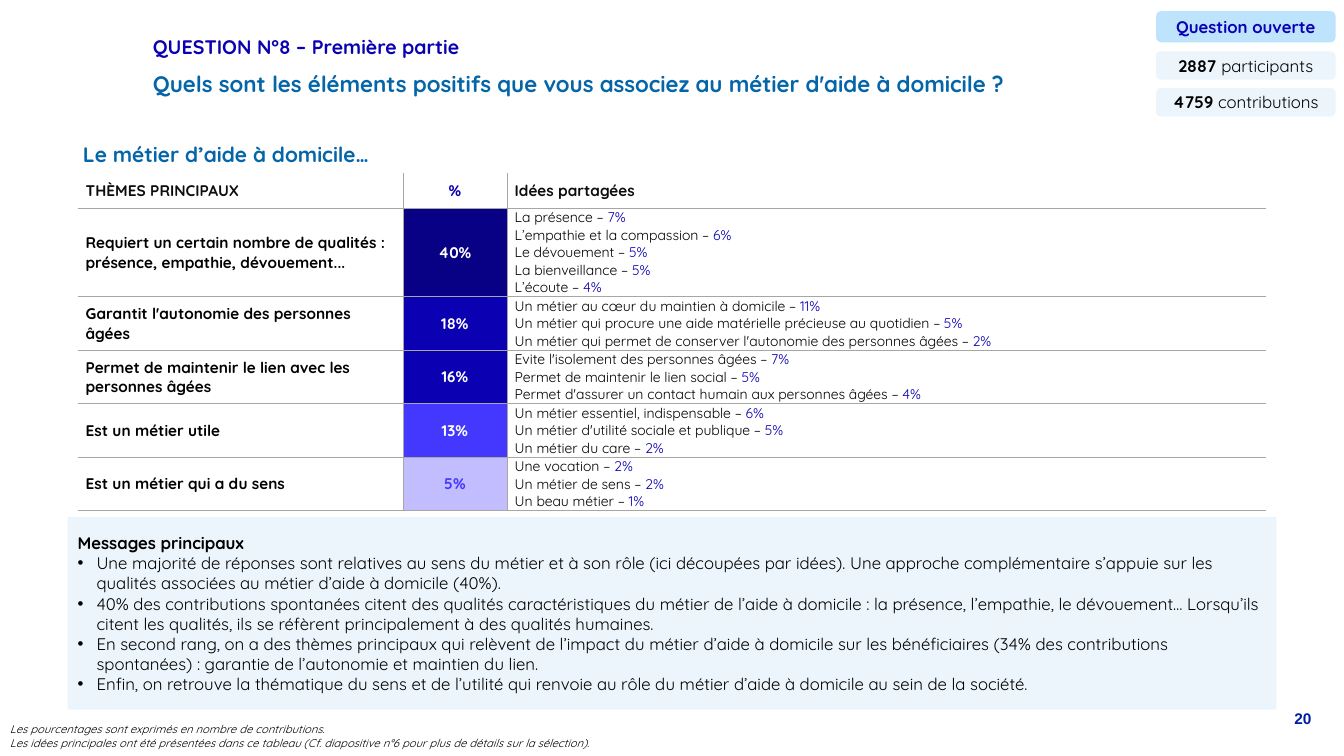
from lxml import etree
from pptx import Presentation
from pptx.dml.color import RGBColor
from pptx.enum import shapes, text
from pptx.oxml import ns
from pptx.util import Pt

NAVY = RGBColor(0x08, 0x00, 0x85)
DEEP = RGBColor(0x0B, 0x00, 0xB2)
VIVID = RGBColor(0x44, 0x38, 0xFF)
LILAC = RGBColor(0xC1, 0xBD, 0xFF)
BLUE = RGBColor(0x04, 0x65, 0xA9)
PAGE = RGBColor(0x01, 0x1C, 0xA3)
SKY = RGBColor(0xBD, 0xE3, 0xFD)
PALE = RGBColor(0xEC, 0xF5, 0xFB)
BLACK = RGBColor(0, 0, 0)
SOFT = RGBColor(0x0D, 0x0D, 0x0D)
WHITE = RGBColor(0xFF, 0xFF, 0xFF)
GREY = "A5A6A5"
LEFT, MID, RIGHT, FULL = (text.PP_ALIGN.LEFT, text.PP_ALIGN.CENTER,
                          text.PP_ALIGN.RIGHT, text.PP_ALIGN.JUSTIFY)


def write(frame, lines, size, ink=BLACK, bold=True, italic=False, align=LEFT,
          font="Quicksand", lead=None, mark=False):
    frame.word_wrap = True
    for i, line in enumerate(lines):
        para = frame.paragraphs[0] if i == 0 else frame.add_paragraph()
        para.alignment = align
        if lead:
            para.line_spacing = lead
        if mark and i > 0:
            props = para._p.get_or_add_pPr()
            props.set("marL", str(Pt(13.5)))
            props.set("indent", str(-Pt(13.5)))
            etree.SubElement(props, ns.qn("a:buFont"), typeface="Arial")
            etree.SubElement(props, ns.qn("a:buChar"), char="•")
        for words, tint, thick in [(line, ink, bold)] if isinstance(line, str) else line:
            run = para.add_run()
            run.text = words
            run.font.name = font
            run.font.size = Pt(size)
            run.font.bold = thick
            run.font.italic = italic
            run.font.color.rgb = tint


def block(kind, left, top, width, height, fill):
    shape = slide.shapes.add_shape(kind, Pt(left), Pt(top), Pt(width), Pt(height))
    shape.shadow.inherit = False
    shape.fill.solid()
    shape.fill.fore_color.rgb = fill
    shape.line.fill.background()
    shape.text_frame.vertical_anchor = text.MSO_ANCHOR.MIDDLE
    return shape.text_frame


deck = Presentation()
deck.slide_width, deck.slide_height = Pt(960), Pt(540)
slide = deck.slides.add_slide(deck.slide_layouts[6])

labels = [
    (102.2, 33.1, 675.4, 55.4, text.MSO_ANCHOR.MIDDLE,
     ["Quels sont les éléments positifs que vous associez au métier d'aide à domicile ?"],
     dict(size=16, ink=BLUE, lead=0.9)),
    (102.2, 24.5, 828, 19.4, text.MSO_ANCHOR.MIDDLE,
     ["QUESTION N°8 – Première partie"], dict(size=14, ink=DEEP, lead=0.9)),
    (52.2, 102.2, 246.6, 20.2, text.MSO_ANCHOR.TOP,
     ["Le métier d’aide à domicile…"], dict(size=15, ink=BLUE, lead=0.7)),
    (0, 512.6, 530.6, 26.6, text.MSO_ANCHOR.TOP,
     ["Les pourcentages sont exprimés en nombre de contributions.",
      "Les idées principales ont été présentées dans ce tableau "
      "(Cf. diapositive n°6 pour plus de détails sur la sélection)."],
     dict(size=8, bold=False, italic=True, align=FULL)),
    (802.1, 502.6, 141.8, 37.4, text.MSO_ANCHOR.TOP,
     ["20"], dict(size=11, ink=PAGE, align=RIGHT, font="Arial")),
]
for left, top, width, height, anchor, lines, look in labels:
    box = slide.shapes.add_textbox(Pt(left), Pt(top), Pt(width), Pt(height))
    box.text_frame.vertical_anchor = anchor
    write(box.text_frame, lines, **look)

themes = [
    ("Requiert un certain nombre de qualités : présence, empathie, dévouement...",
     "40%", NAVY, WHITE,
     [("La présence", 7), ("L’empathie et la compassion", 6), ("Le dévouement", 5),
      ("La bienveillance", 5), ("L’écoute", 4)]),
    ("Garantit l'autonomie des personnes âgées", "18%", DEEP, WHITE,
     [("Un métier au cœur du maintien à domicile", 11),
      ("Un métier qui procure une aide matérielle précieuse au quotidien", 5),
      ("Un métier qui permet de conserver l'autonomie des personnes âgées", 2)]),
    ("Permet de maintenir le lien avec les personnes âgées", "16%", DEEP, WHITE,
     [("Evite l'isolement des personnes âgées", 7),
      ("Permet de maintenir le lien social", 5),
      ("Permet d'assurer un contact humain aux personnes âgées", 4)]),
    ("Est un métier utile", "13%", VIVID, WHITE,
     [("Un métier essentiel, indispensable", 6),
      ("Un métier d'utilité sociale et publique", 5), ("Un métier du care", 2)]),
    ("Est un métier qui a du sens", "5%", LILAC, VIVID,
     [("Une vocation", 2), ("Un métier de sens", 2), ("Un beau métier", 1)]),
]
tall = [25.2] + [12.5 * len(theme[4]) + 0.72 for theme in themes]
grid = slide.shapes.add_table(6, 3, Pt(55.6), Pt(123.3), Pt(848.7), Pt(sum(tall))).table
grid.first_row = grid.horz_banding = False
for col, width in zip(grid.columns, (232.2, 74.3, 542.2)):
    col.width = Pt(width)
for row, height in zip(grid.rows, tall):
    row.height = Pt(height)

for c, (head, ink, align) in enumerate([("THÈMES PRINCIPAUX", SOFT, LEFT),
                                        ("%", DEEP, MID), ("Idées partagées", SOFT, LEFT)]):
    write(grid.cell(0, c).text_frame, [head], 11, ink, align=align)
for r, (theme, share, fill, ink, ideas) in enumerate(themes, 1):
    write(grid.cell(r, 0).text_frame, [theme], 11)
    write(grid.cell(r, 1).text_frame, [share], 11, ink, align=MID)
    write(grid.cell(r, 2).text_frame,
          [[(f"{idea} – ", BLACK, False), (f"{part}%", DEEP, False)] for idea, part in ideas], 10)

for r in range(6):
    for c in range(3):
        cell = grid.cell(r, c)
        cell.vertical_anchor = text.MSO_ANCHOR.MIDDLE
        cell.margin_left = cell.margin_right = Pt(5.6)
        cell.margin_top, cell.margin_bottom = Pt(0.6), 0
        props = cell._tc.get_or_add_tcPr()
        for side, shown in (("L", c > 0), ("R", c < 2), ("T", r > 0), ("B", True)):
            edge = etree.SubElement(props, ns.qn("a:ln" + side), w=str(Pt(0.25)))
            if shown:
                paint = etree.SubElement(edge, ns.qn("a:solidFill"))
                etree.SubElement(paint, ns.qn("a:srgbClr"), val=GREY)
            else:
                etree.SubElement(edge, ns.qn("a:noFill"))
        if r > 0 and c == 1:
            cell.fill.solid()
            cell.fill.fore_color.rgb = themes[r - 1][2]
        else:
            cell.fill.background()

notes = [
    "Une majorité de réponses sont relatives au sens du métier et à son rôle (ici découpées par "
    "idées). Une approche complémentaire s’appuie sur les qualités associées au métier d’aide à "
    "domicile (40%).",
    "40% des contributions spontanées citent des qualités caractéristiques du métier de l’aide à "
    "domicile : la présence, l’empathie, le dévouement… Lorsqu’ils citent les qualités, ils se "
    "réfèrent principalement à des qualités humaines.",
    "En second rang, on a des thèmes principaux qui relèvent de l’impact du métier d’aide à "
    "domicile sur les bénéficiaires (34% des contributions spontanées) : garantie de l’autonomie "
    "et maintien du lien.",
    "Enfin, on retrouve la thématique du sens et de l’utilité qui renvoie au rôle du métier d’aide "
    "à domicile au sein de la société.",
]
panel = block(shapes.MSO_SHAPE.RECTANGLE, 48.4, 369.4, 863.3, 137.5, PALE)
write(panel, [[("Messages principaux", BLACK, True)]] + notes, 12, bold=False, mark=True)

badges = [
    (7.9, 22.3, SKY, [("Question ouverte", DEEP, True)]),
    (36.7, 20.2, PALE, [("2887 ", BLACK, True), ("participants", BLACK, False)]),
    (62.9, 20.2, PALE, [("4759 ", BLACK, True), ("contributions", BLACK, False)]),
]
for top, height, fill, line in badges:
    badge = block(shapes.MSO_SHAPE.ROUNDED_RECTANGLE, 825.8, top, 128.2, height, fill)
    write(badge, [line], 12, align=MID)

deck.save("out.pptx")
